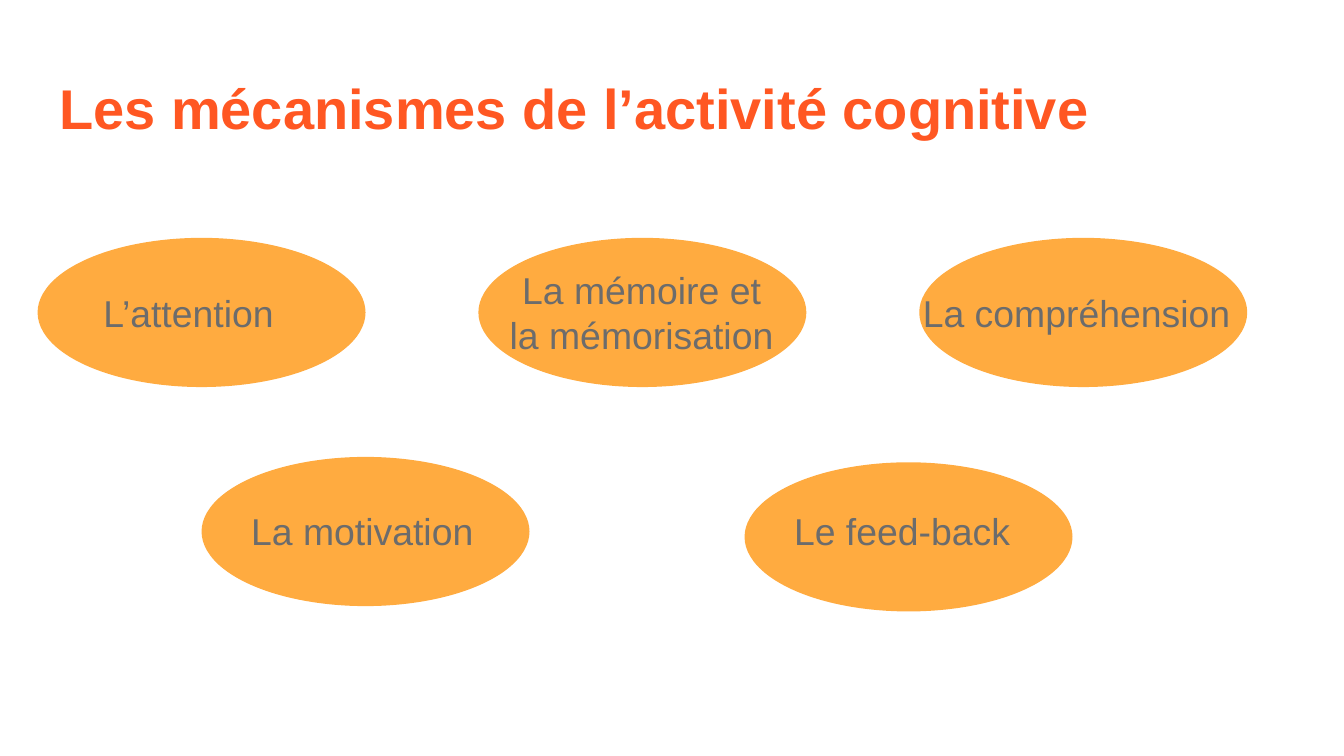
from dataclasses import dataclass
from pptx import Presentation
from pptx.dml.color import RGBColor
from pptx.enum.shapes import MSO_SHAPE
from pptx.enum.text import MSO_ANCHOR, MSO_AUTO_SIZE, PP_ALIGN
from pptx.util import Inches, Pt

OVAL = MSO_SHAPE.OVAL
TOP = MSO_ANCHOR.TOP
GROW, FIXED = MSO_AUTO_SIZE.SHAPE_TO_FIT_TEXT, MSO_AUTO_SIZE.NONE
LEFT, MID = PP_ALIGN.LEFT, PP_ALIGN.CENTER

COLORS = {"title": "FF5722", "oval": "FFAB40", "text": "6C6C6C"}
COLS = 1000
ROWS = COLS * 9 / 16
OVAL_W, OVAL_H = 244, 111
ROW_X, ROW_Y, STEP = 28, 177, 328


@dataclass
class Box:
    col: int
    row: int
    wide: int
    high: int


@dataclass
class Idea:
    text: str
    col: int
    row: int
    label: Box
    align: PP_ALIGN = LEFT


IDEAS = [
    Idea("Le feed-back", 554, 344, Box(581, 373, 189, 44)),
    Idea("La motivation", 150, 340, Box(177, 373, 189, 44)),
    Idea("La compréhension ", ROW_X + 2 * STEP, ROW_Y, Box(667, 211, 276, 44), MID),
    Idea("L’attention", ROW_X, ROW_Y, Box(67, 211, 189, 44)),
    Idea("La mémoire et la mémorisation", ROW_X + STEP, ROW_Y, Box(366, 194, 223, 77), MID),
]

deck = Presentation()
deck.slide_width = Inches(10)
deck.slide_height = deck.slide_width * 9 // 16
slide = deck.slides.add_slide(deck.slide_layouts[5])


def place(box: Box) -> tuple[int, int, int, int]:
    unit_x, unit_y = deck.slide_width / COLS, deck.slide_height / ROWS
    return (round(box.col * unit_x), round(box.row * unit_y),
            round(box.wide * unit_x), round(box.high * unit_y))


def write(frame, text: str, size: int, color: str, align: PP_ALIGN, bold: bool = False) -> None:
    frame.word_wrap = True
    frame.vertical_anchor = TOP
    frame.text = text
    para = frame.paragraphs[0]
    para.alignment = align
    font = para.font
    font.name, font.size, font.bold = "Arial", Pt(size), bold
    font.color.rgb = RGBColor.from_string(COLORS[color])


def draw_title(text: str, box: Box) -> None:
    title = slide.shapes.title
    title.left, title.top, title.width, title.height = place(box)
    frame = title.text_frame
    write(frame, text, 30, "title", LEFT, True)
    frame.auto_size = FIXED
    frame.margin_left = frame.margin_right = Inches(0.1)
    frame.margin_top = frame.margin_bottom = Inches(0.1)


def draw_oval(idea: Idea) -> None:
    oval = slide.shapes.add_shape(OVAL, *place(Box(idea.col, idea.row, OVAL_W, OVAL_H)))
    oval.shadow.inherit = False
    oval.fill.solid()
    oval.fill.fore_color.rgb = RGBColor.from_string(COLORS["oval"])
    oval.line.fill.background()


def draw_label(idea: Idea) -> None:
    frame = slide.shapes.add_textbox(*place(idea.label)).text_frame
    write(frame, idea.text, 20, "text", idea.align)
    frame.auto_size = GROW


draw_title("Les mécanismes de l’activité cognitive", Box(34, 45, 932, 63))
for idea in IDEAS:
    draw_oval(idea)
for idea in IDEAS:
    draw_label(idea)

deck.save("out.pptx")
